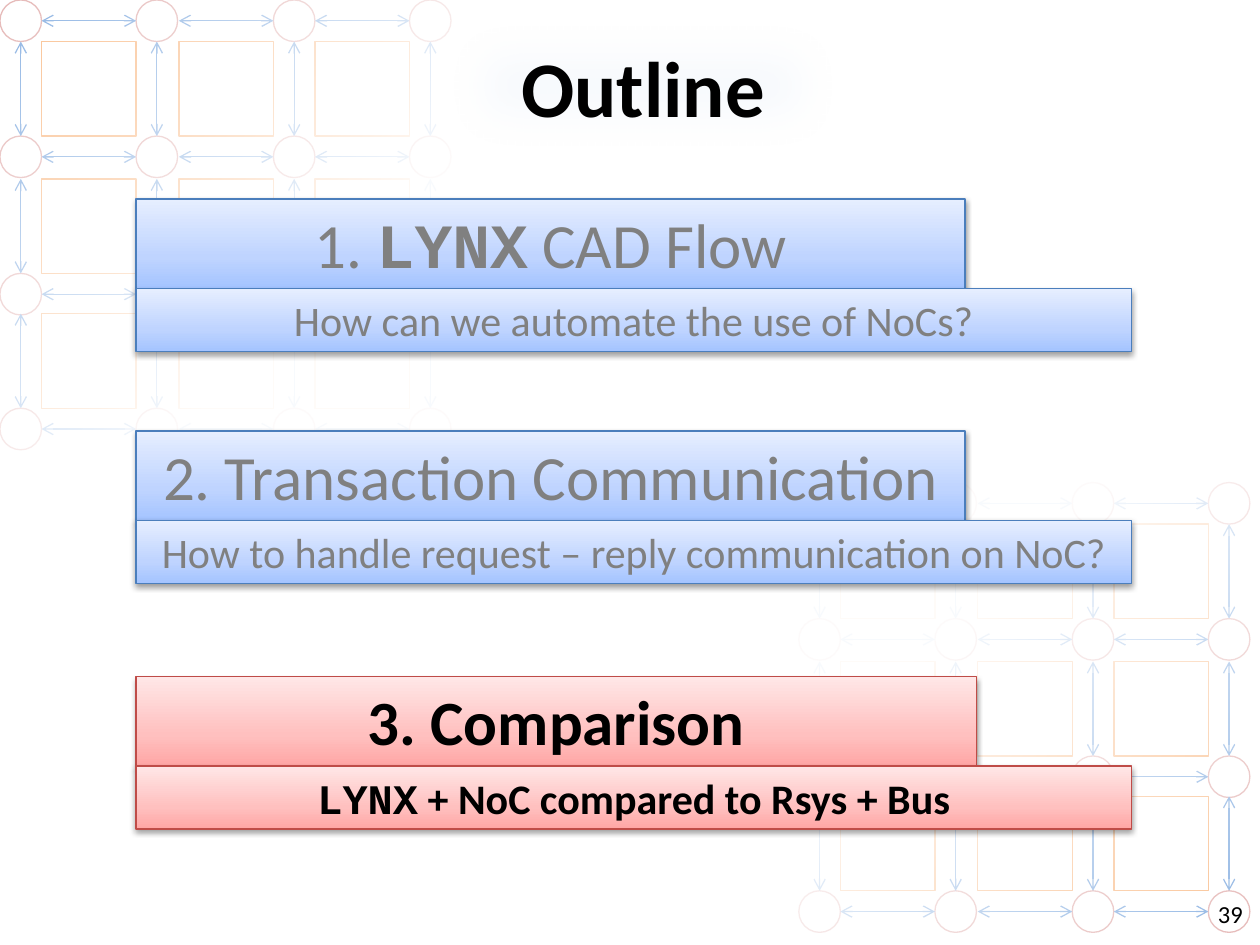
from dataclasses import dataclass
from itertools import product

from lxml import etree
from pptx import Presentation
from pptx.dml.color import RGBColor
from pptx.enum.shapes import MSO_CONNECTOR, MSO_SHAPE
from pptx.enum.text import MSO_ANCHOR, MSO_AUTO_SIZE, PP_ALIGN
from pptx.oxml import parse_xml
from pptx.oxml.ns import nsdecls, qn
from pptx.util import Inches, Pt

RECT, OVAL = MSO_SHAPE.RECTANGLE, MSO_SHAPE.OVAL
STRAIGHT = MSO_CONNECTOR.STRAIGHT
TOP, MIDDLE = MSO_ANCHOR.TOP, MSO_ANCHOR.MIDDLE
CENTER = PP_ALIGN.CENTER
FIT_SHAPE = MSO_AUTO_SIZE.SHAPE_TO_FIT_TEXT


@dataclass(frozen=True)
class Stop:
    pos: int
    color: str
    opacity: int = 100


@dataclass(frozen=True)
class Palette:
    stops: tuple[Stop, ...]
    line: str
    text: str


@dataclass(frozen=True)
class Theme:
    font: str = "Calibri"
    mono: str = "Courier New"
    black: str = "000000"
    white: str = "FFFFFF"
    title_fill: str = "C6D9F1"
    title_outline: str = "DCE6F2"
    cell: str = "FAC090"
    node: str = "E6B9B8"
    link: str = "8EB4E3"
    line_width: float = 0.75
    title_size: int = 45
    heading_size: int = 36
    question_size: int = 24
    number_size: int = 14
    fade: tuple[Stop, ...] = (Stop(0, "FFFFFF", 0), Stop(66, "FFFFFF", 93))
    muted: Palette = Palette(
        (Stop(0, "A4C4FF"), Stop(35, "BFD4FF"), Stop(100, "E6EEFF")), "4B7EBC", "808080")
    active: Palette = Palette(
        (Stop(0, "FFA6A5"), Stop(35, "FFC0BF"), Stop(100, "FFE7E7")), "BF4C48", "000000")


@dataclass(frozen=True)
class Span:
    text: str
    bold: bool = False
    mono: bool = False


@dataclass(frozen=True)
class Section:
    top: float
    heading_width: float
    heading: tuple[Span, ...]
    question: tuple[Span, ...]
    palette: Palette


THEME = Theme()
NODE, CELL = 0.33, 0.75
COLUMNS = (0, 1.08, 2.17, 3.25)
ROWS = (0, 1.08, 2.17, 3.24)
LEFT, HEADING_HEIGHT, QUESTION_WIDTH, QUESTION_HEIGHT = 1.08, 0.71, 7.9, 0.5

SECTIONS = (
    Section(1.58, 6.58,
            (Span("1. "), Span("LYNX", True, True), Span(" CAD Flow")),
            (Span("How can we automate the use of NoCs?"),), THEME.muted),
    Section(3.42, 6.58,
            (Span("2. Transaction Communication"),),
            (Span("How to handle request – reply communication on NoC?"),), THEME.muted),
    Section(5.37, 6.67,
            (Span("3. Comparison", True),),
            (Span("LYNX", True, True), Span(" + NoC compared to Rsys + Bus", True)),
            THEME.active),
)


def rgb(color: str) -> RGBColor:
    return RGBColor.from_string(color)


def set_line(line, color: str) -> None:
    line.color.rgb = rgb(color)
    line.width = Pt(THEME.line_width)


def set_gradient(sp, stops: tuple[Stop, ...], angle: int) -> None:
    marks = "".join(
        f'<a:gs pos="{s.pos * 1000}"><a:srgbClr val="{s.color}">'
        f'<a:alpha val="{s.opacity * 1000}"/></a:srgbClr></a:gs>' for s in stops)
    sp.fill.background()
    spPr = sp._element.spPr
    spPr.replace(spPr.find(qn("a:noFill")), parse_xml(
        f'<a:gradFill {nsdecls("a")} rotWithShape="1"><a:gsLst>{marks}</a:gsLst>'
        f'<a:lin ang="{angle * 60000}" scaled="0"/></a:gradFill>'))


def add_effect(sp, xml: str) -> None:
    sp.shadow.inherit = False
    sp._element.spPr.find(qn("a:effectLst")).append(parse_xml(xml))


def add_box(slide, shape: MSO_SHAPE, x: float, y: float, w: float, h: float):
    sp = slide.shapes.add_shape(shape, Inches(x), Inches(y), Inches(w), Inches(h))
    sp.shadow.inherit = False
    return sp


def add_link(slide, x1: float, y1: float, x2: float, y2: float) -> None:
    link = slide.shapes.add_connector(
        STRAIGHT, Inches(x1), Inches(y1), Inches(x2), Inches(y2))
    set_line(link.line, THEME.link)
    for end in ("a:headEnd", "a:tailEnd"):
        etree.SubElement(link.line._ln, qn(end), type="arrow")
    etree.SubElement(link._element.spPr, qn("a:effectLst"))


def add_lattice(slide, left: float, top: float) -> None:
    for (i, dx), (j, dy) in product(enumerate(COLUMNS), enumerate(ROWS)):
        x, y = left + dx, top + dy
        if i and j:
            cell = add_box(slide, RECT, x - CELL, y - CELL, CELL, CELL)
            cell.fill.background()
            set_line(cell.line, THEME.cell)
        node = add_box(slide, OVAL, x, y, NODE, NODE)
        node.fill.solid()
        node.fill.fore_color.rgb = rgb(THEME.white)
        set_line(node.line, THEME.node)
        if i:
            add_link(slide, x - CELL, y + NODE / 2, x, y + NODE / 2)
        if j:
            add_link(slide, x + NODE / 2, y, x + NODE / 2, y - CELL)


def add_fade(slide, x: float, y: float, w: float, h: float, rotation: int) -> None:
    fade = add_box(slide, RECT, x, y, w, h)
    set_gradient(fade, THEME.fade, 45)
    fade.line.fill.background()
    fade.rotation = rotation


def write(tf, spans: tuple[Span, ...], size: int, color: str, anchor: MSO_ANCHOR) -> None:
    tf.vertical_anchor = anchor
    p = tf.paragraphs[0]
    p.alignment = CENTER
    for span in spans:
        r = p.add_run()
        r.text = span.text
        r.font.name = THEME.mono if span.mono else THEME.font
        r.font.size = Pt(size)
        r.font.bold = span.bold
        r.font.color.rgb = rgb(color)


def add_title(slide, text: str) -> None:
    title = slide.shapes.title
    title.left, title.top = Inches(3.53), Inches(0.13)
    title.width, title.height = Inches(3.15), Inches(1.1)
    set_gradient(title, (Stop(0, THEME.title_fill, 15), Stop(100, THEME.title_fill, 15)), 0)
    add_effect(title, f'<a:softEdge {nsdecls("a")} rad="{Pt(25)}"/>')
    write(title.text_frame, (Span(text, True),), THEME.title_size, THEME.black, MIDDLE)
    rPr = title.text_frame.paragraphs[0].runs[0].font._element
    rPr.insert(0, parse_xml(
        f'<a:ln {nsdecls("a")} w="{Pt(1)}"><a:solidFill>'
        f'<a:srgbClr val="{THEME.title_outline}"/></a:solidFill></a:ln>'))
    slide.shapes._spTree.append(title._element)


def add_bar(slide, y: float, w: float, h: float, spans: tuple[Span, ...],
            size: int, palette: Palette) -> None:
    bar = add_box(slide, RECT, LEFT, y, w, h)
    set_gradient(bar, palette.stops, 270)
    set_line(bar.line, palette.line)
    add_effect(bar, f'<a:outerShdw {nsdecls("a")} blurRad="40000" dist="20000" dir="5400000" '
                    f'rotWithShape="0"><a:srgbClr val="{THEME.black}">'
                    '<a:alpha val="38000"/></a:srgbClr></a:outerShdw>')
    bar.text_frame.word_wrap = True
    bar.text_frame.auto_size = FIT_SHAPE
    write(bar.text_frame, spans, size, palette.text, TOP)


def add_section(slide, s: Section) -> None:
    add_bar(slide, s.top, s.heading_width, HEADING_HEIGHT, s.heading,
            THEME.heading_size, s.palette)
    add_bar(slide, s.top + HEADING_HEIGHT, QUESTION_WIDTH, QUESTION_HEIGHT, s.question,
            THEME.question_size, s.palette)


def main() -> None:
    prs = Presentation()
    prs.slide_width, prs.slide_height = Inches(10), Inches(7.5)
    slide = prs.slides.add_slide(prs.slide_layouts[5])
    add_lattice(slide, 0, 0)
    add_fade(slide, 0, 0, 3.66, 3.67, 0)
    add_lattice(slide, 6.34, 3.83)
    add_fade(slide, 6.25, 3.67, 3.75, 3.83, 180)
    add_title(slide, "Outline")
    number = slide.shapes.add_textbox(Inches(9.55), Inches(7.05), Inches(0.43), Inches(0.4))
    number.text_frame.word_wrap = True
    write(number.text_frame, (Span("39"),), THEME.number_size, THEME.black, MIDDLE)
    for section in SECTIONS:
        add_section(slide, section)
    prs.save("out.pptx")


if __name__ == "__main__":
    main()
